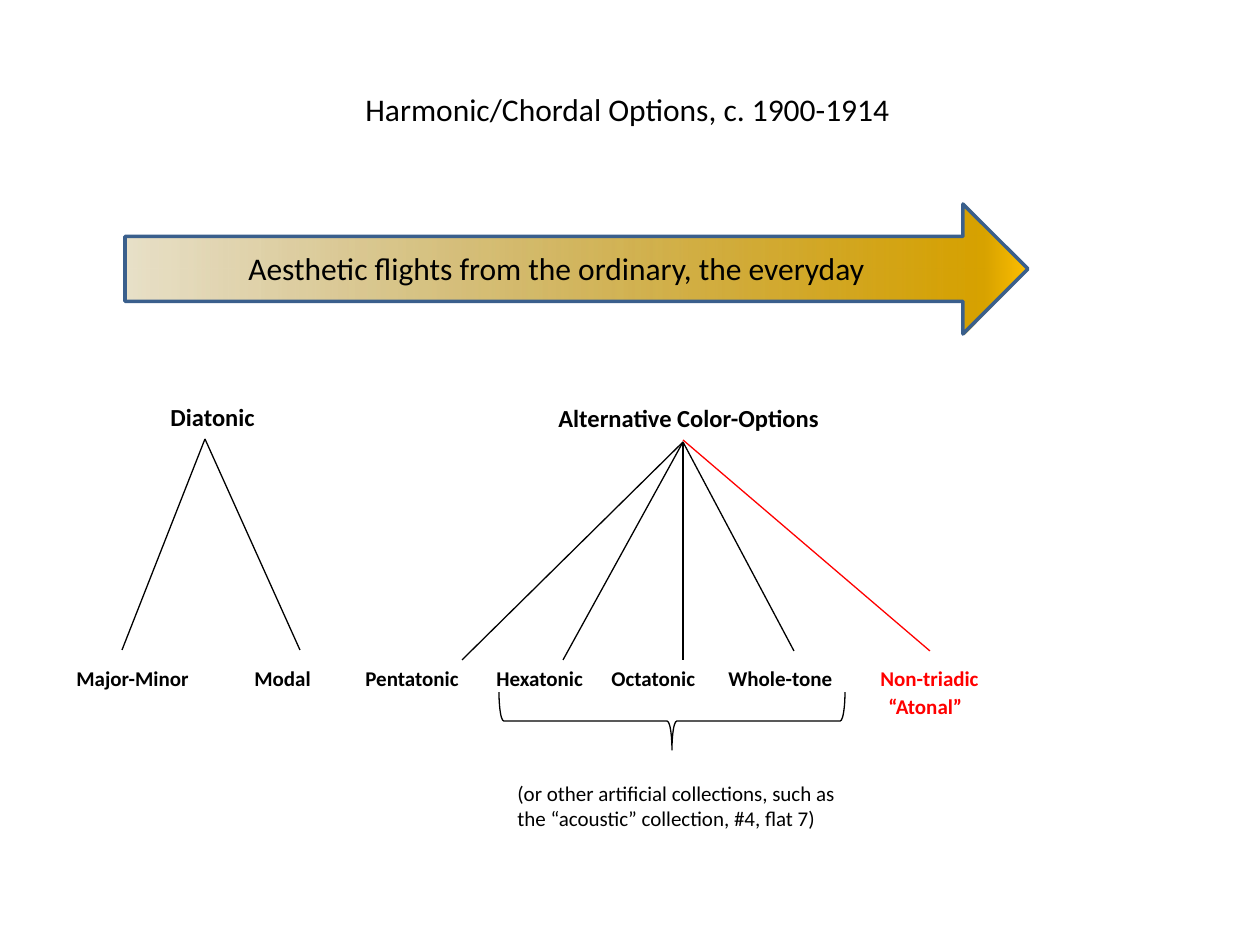
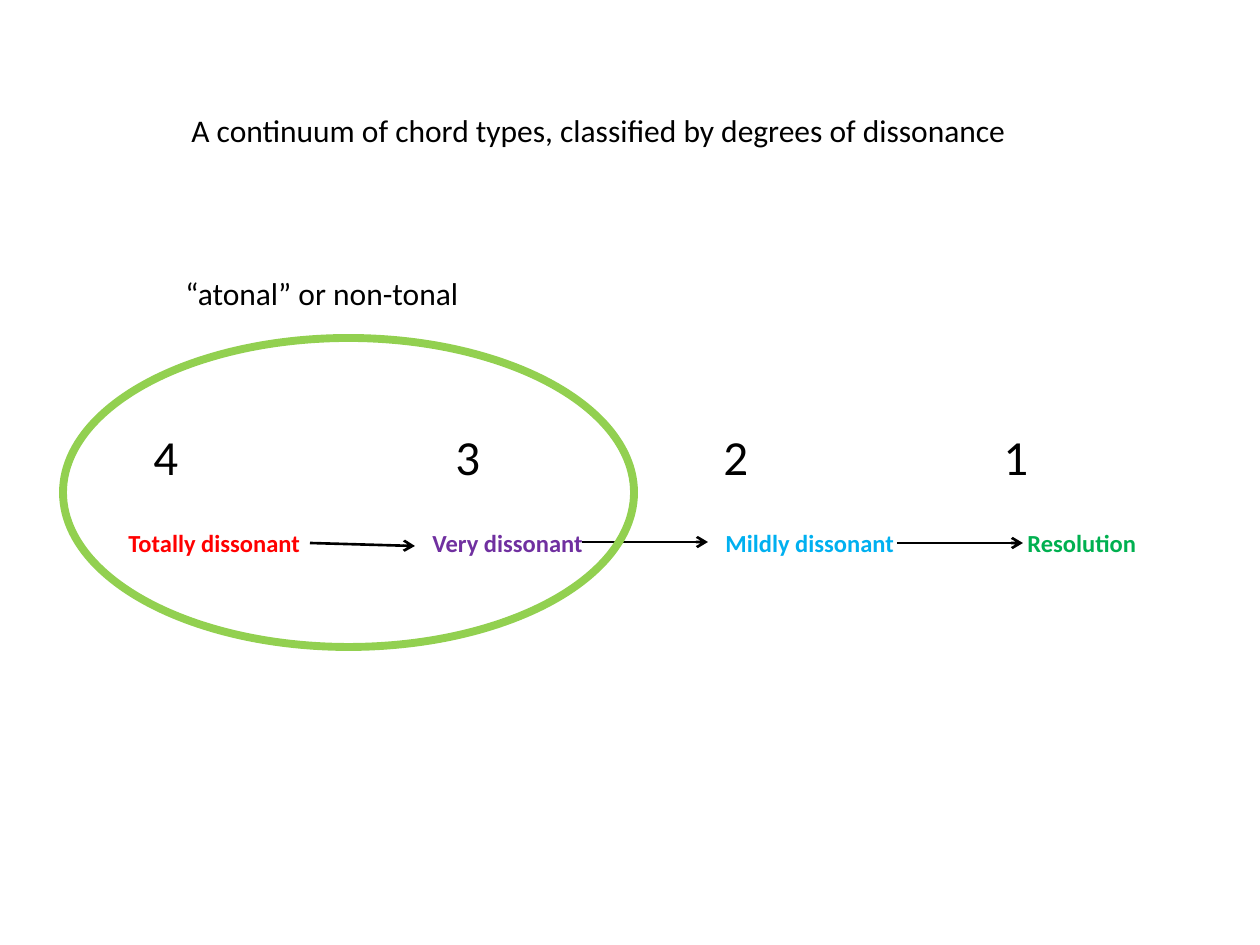
from lxml.etree import SubElement as Sub
from pptx import Presentation
from pptx.dml.color import RGBColor as Rgb
from pptx.enum.shapes import MSO_CONNECTOR as Conn, MSO_SHAPE as Kind
from pptx.oxml.ns import qn
from pptx.util import Emu, Pt

FONT = "Calibri"
SCALE = 914400 / 126
INSET = 13  # default left margin of a text box
HEX = {
    "black": "000000", "white": "FFFFFF", "red": "FF0000",
    "purple": "7030A0", "sky": "00B0F0", "green": "00B050",
    "lime": "92D050", "navy": "3A5F8C",
}

# Slide 1: boxes are (left, top, width, height), points are (x, y)
OPTIONS = {
    "title": ("Harmonic/Chordal Options, c. 1900-1914", (353, 84, 577, 50)),
    "flight": ("Aesthetic flights from the ordinary, the everyday",
               (236, 243, 683, 53)),
    "arrow": (125, 204, 903, 130),
    "fade": [(0, "977200", 21), (95, "D7A200", 100), (100, "FFC000", 100)],
    "heads": [("Diatonic", (158, 396, 158, 43)),
              ("Alternative Color-Options", (546, 397, 305, 43))],
    "rays": [
        ((205, 439), [(122, 650), (300, 650)], "black"),
        ((683, 442), [(462, 660), (563, 660), (683, 660), (794, 651)], "black"),
        ((683, 440), [(930, 651)], "red"),
    ],
    "row": (64, 659, 1155, 68),
    "scales": [
        [("Major-Minor", 77, "black"), ("Modal", 255, "black"),
         ("Pentatonic", 366, "black"), ("Hexatonic", 497, "black"),
         ("Octatonic", 612, "black"), ("Whole-tone", 729, "black"),
         ("Non-triadic", 881, "red")],
        [("“Atonal”", 889, "red")],
    ],
    "brace": (643, 548, 58, 346),
    "note": (["(or other artificial collections, such as",
              "the “acoustic” collection, #4, flat 7)"], (505, 774, 345, 63)),
}

# Slide 2
CHORDS = {
    "title": ("A continuum of chord types, classified by degrees of dissonance",
              (179, 105, 861, 53)),
    "zone": ("“atonal” or non-tonal", (173, 268, 336, 50)),
    "oval": (63, 338, 571, 309),
    "ranks": [("4", 154, "black"), ("3", 456, "black"),
              ("2", 724, "black"), ("1", 1004, "black")],
    "rank row": (141, 420, 1061, 72),
    "grades": [("Totally dissonant", 129, "red"),
               ("Very dissonant", 433, "purple"),
               ("Mildly dissonant", 726, "sky"),
               ("Resolution", 1028, "green")],
    "grade row": (116, 522, 1040, 43),
    "steps": [((310, 543), (415, 546)), ((582, 542), (708, 542)),
              ((897, 543), (1023, 543))],
}


def px(*vals):
    return [Emu(round(v * SCALE)) for v in vals]


def color(name):
    return Rgb.from_string(HEX[name])


def style(font, size, bold=False, hue=None):
    font.name, font.size, font.bold = FONT, Pt(size), bold
    if hue:
        font.color.rgb = color(hue)


def frame(slide, box):
    text = slide.shapes.add_textbox(*px(*box)).text_frame
    text.word_wrap = True
    return text


def label(slide, lines, box, size, bold=False):
    """Plain black text, one paragraph a line."""
    text = frame(slide, box)
    text.text = lines if isinstance(lines, str) else "\n".join(lines)
    for para in text.paragraphs:
        style(para.font, size, bold, "black")


def tabbed(slide, rows, box, size, bold):
    """Rows of (word, x, colour), each word set at x by a tab stop."""
    text = frame(slide, box)
    start = box[0] + INSET
    for num, row in enumerate(rows):
        para = text.add_paragraph() if num else text.paragraphs[0]
        if num:
            para.space_before = Pt(2)
        tabs = Sub(para._p.get_or_add_pPr(), qn("a:tabLst"))
        for word, x, hue in row:
            lead = ""
            if x > start:
                Sub(tabs, qn("a:tab"), pos=str(px(x - start)[0]), algn="l")
                lead = "\t"
            run = para.add_run()
            run.text = lead + word
            run.font.color.rgb = color(hue)
        style(para.font, size, bold)


def shape(slide, kind, box, hue, width):
    item = slide.shapes.add_shape(kind, *px(*box))
    item.shadow.inherit = False
    item.fill.background()
    item.line.color.rgb = color(hue)
    item.line.width = Pt(width)
    return item


def line(slide, start, end, hue, width, tip=False):
    item = slide.shapes.add_connector(Conn.STRAIGHT, *px(*start, *end))
    item.line.color.rgb = color(hue)
    item.line.width = Pt(width)
    if tip:
        Sub(item.line._get_or_add_ln(), qn("a:tailEnd"), type="arrow")
    Sub(item._element.spPr, qn("a:effectLst"))


def fade(item, stops):
    item.fill.gradient()
    item.fill.gradient_angle = 0
    group = item._element.spPr.find(".//" + qn("a:gsLst"))
    for old in list(group):
        group.remove(old)
    for at, code, alpha in stops:
        stop = Sub(group, qn("a:gs"), pos=str(at * 1000))
        tint = Sub(stop, qn("a:srgbClr"), val=code)
        Sub(tint, qn("a:alpha"), val=str(alpha * 1000))


def page(deck):
    slide = deck.slides.add_slide(deck.slide_layouts[6])
    slide.background.fill.solid()
    slide.background.fill.fore_color.rgb = color("white")
    return slide


def options(slide):
    data = OPTIONS
    # Headings and scale names
    for head, box in data["heads"]:
        label(slide, head, box, 14, True)
    tabbed(slide, data["scales"], data["row"], 12, True)
    # Brace and its note
    brace = shape(slide, Kind.LEFT_BRACE, data["brace"], "black", 0.75)
    brace.rotation = 270
    label(slide, *data["note"], 12)
    # Branches
    for root, ends, hue in data["rays"]:
        for end in ends:
            line(slide, root, end, hue, 0.75)
    # Wide arrow and title
    arrow = shape(slide, Kind.RIGHT_ARROW, data["arrow"], "navy", 2)
    fade(arrow, data["fade"])
    label(slide, *data["flight"], 18)
    label(slide, *data["title"], 18)


def chords(slide):
    data = CHORDS
    # Grades and the steps between them
    tabbed(slide, [data["grades"]], data["grade row"], 14, True)
    for start, end in data["steps"]:
        line(slide, start, end, "black", 1.5, True)
    tabbed(slide, [data["ranks"]], data["rank row"], 28, False)
    # Ringed zone and title
    shape(slide, Kind.OVAL, data["oval"], "lime", 4.5)
    label(slide, *data["zone"], 18)
    label(slide, *data["title"], 18)


def main():
    deck = Presentation()
    deck.slide_width, deck.slide_height = px(1260, 945)
    options(page(deck))
    chords(page(deck))
    deck.save("out.pptx")


if __name__ == "__main__":
    main()
